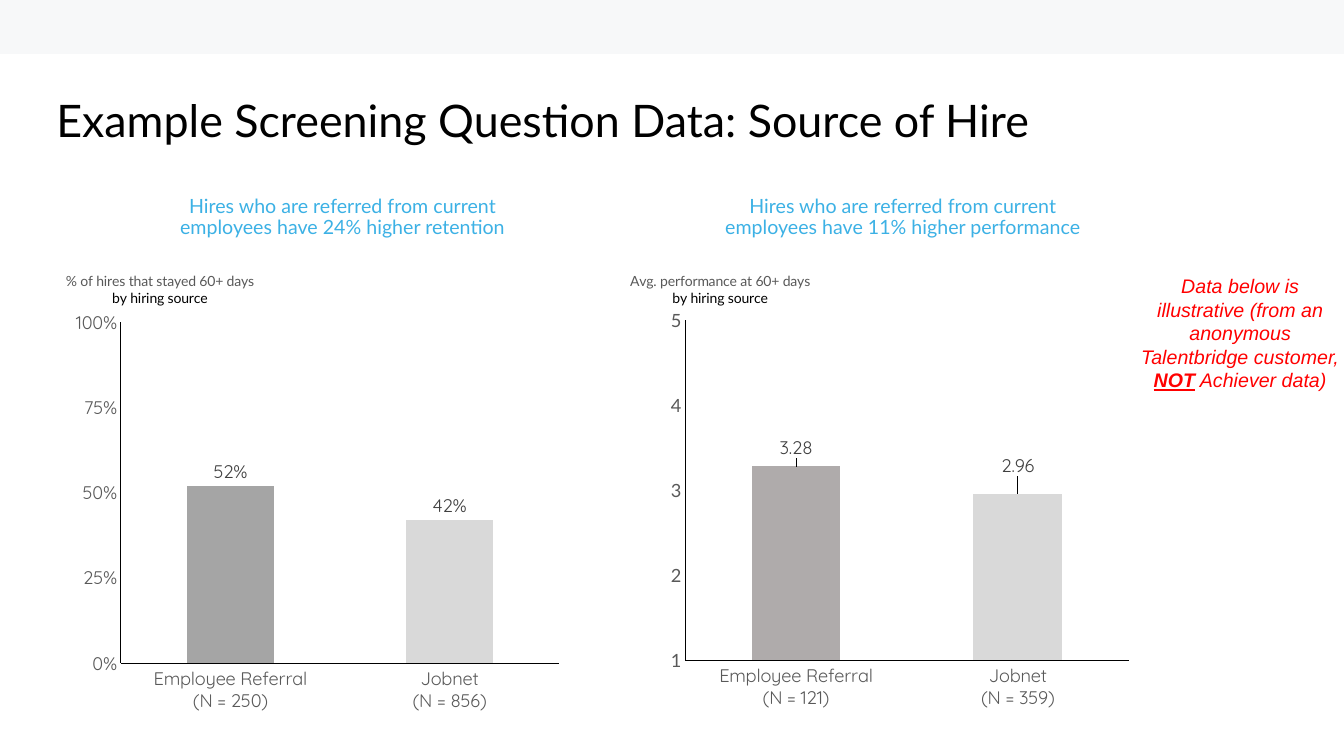
from lxml.etree import SubElement
from pptx import Presentation
from pptx.chart.data import CategoryChartData
from pptx.dml.color import RGBColor
from pptx.enum.chart import XL_CHART_TYPE as ChartType, XL_LABEL_POSITION as LabelPosition
from pptx.enum.chart import XL_TICK_MARK as TickMark
from pptx.enum.shapes import MSO_SHAPE as Shape
from pptx.enum.text import MSO_ANCHOR as Anchor, PP_ALIGN as Align
from pptx.oxml.ns import qn
from pptx.util import Cm, Pt

TITLE = "Example Screening Question Data: Source of Hire"
NOTE = [
    ("Data below is illustrative (from an anonymous Talentbridge customer, ", False),
    ("NOT", True),
    (" Achiever data)", False),
]
CHARTS = [
    dict(
        headline="Hires who are referred from current employees have 24% higher retention",
        headline_left=3.48, box=(1.45, 6.38, 13.31, 12.45),
        title=("% of hires that stayed 60+ days", "by hiring source"), title_at=(0.01, 0.03),
        bars=[("Employee Referral\n(N = 250)", 0.52, "A5A5A5", -0.06),
              ("Jobnet\n(N = 856)", 0.42, "D9D9D9", -0.06)],
        scale=(0, 1, 0.25), axis_format="0%", label_format="0%", axis_font="Quicksand",
        plot=(0.12, 0.14, 0.83, 0.69),
    ),
    dict(
        headline="Hires who are referred from current employees have 11% higher performance",
        headline_left=17.6, box=(15.67, 6.38, 13.31, 12.07),
        title=("Avg. performance at 60+ days", "by hiring source"), title_at=(0.01, 0.03),
        bars=[("Employee Referral\n(N = 121)", 3.28, "AFABAB", -0.07),
              ("Jobnet\n(N = 359)", 2.96, "D9D9D9", -0.09)],
        scale=(1, 5, 1), axis_format="0", label_format="0.00", axis_font="Lato",
        plot=(0.12, 0.14, 0.84, 0.71),
    ),
]


def rgb(color):
    return RGBColor.from_string(color)


def set_font(font, size, color, name="Lato"):
    font.size, font.name, font.bold = Pt(size), name, False
    font.color.rgb = rgb(color)


def add_text(slide, box, runs, size, color, name="Lato", align=Align.CENTER,
             anchor=Anchor.TOP, spacing=None, margins=None, italic=None):
    frame = slide.shapes.add_textbox(*map(Cm, box)).text_frame
    frame.word_wrap, frame.vertical_anchor = True, anchor
    if margins is not None:
        frame.margin_left = frame.margin_right = Cm(margins)
        frame.margin_top = frame.margin_bottom = Cm(margins)
    paragraph = frame.paragraphs[0]
    paragraph.alignment, paragraph.line_spacing = align, spacing
    for text, strong in runs:
        run = paragraph.add_run()
        run.text = text
        set_font(run.font, size, color, name)
        run.font.bold = run.font.underline = strong
        run.font.italic = italic


def set_layout(parent, index, **values):
    layout = parent.find(qn("c:layout"))
    if layout is None:
        layout = parent.makeelement(qn("c:layout"))
        parent.insert(index, layout)
    manual = SubElement(layout, qn("c:manualLayout"))
    for tag, value in values.items():
        SubElement(manual, qn(f"c:{tag}")).set("val", str(value))


def style_axis(axis, font_name):
    axis.has_major_gridlines = False
    axis.major_tick_mark = axis.minor_tick_mark = TickMark.NONE
    axis.format.line.color.rgb = rgb("000000")
    axis.format.line.width = Pt(0.75)
    set_font(axis.tick_labels.font, 13, "595959", font_name)


def add_bar_chart(slide, item):
    data = CategoryChartData(number_format=item["label_format"])
    data.categories = [bar[0] for bar in item["bars"]]
    data.add_series("Series 1", [bar[1] for bar in item["bars"]])
    frame = slide.shapes.add_chart(ChartType.COLUMN_STACKED, *map(Cm, item["box"]), data)
    chart = frame.chart
    chart.has_legend = False
    set_font(chart.font, 10, "000000")

    chart.has_title = True
    title = chart.chart_title
    title_frame = title.text_frame
    for index, (line, color) in enumerate(zip(item["title"], ("595959", "000000"))):
        paragraph = title_frame.add_paragraph() if index else title_frame.paragraphs[0]
        paragraph.alignment = Align.CENTER
        run = paragraph.add_run()
        run.text = line
        set_font(run.font, 10, color)
    left, top = item["title_at"]
    set_layout(title._element, 1, xMode="edge", yMode="edge", x=left, y=top)
    left, top, width, height = item["plot"]
    set_layout(chart._chartSpace.chart.plotArea, 0, layoutTarget="inner", xMode="edge",
               yMode="edge", x=left, y=top, w=width, h=height)

    style_axis(chart.category_axis, "Quicksand")
    axis = chart.value_axis
    style_axis(axis, item["axis_font"])
    axis.minimum_scale, axis.maximum_scale, axis.major_unit = item["scale"]
    axis.tick_labels.number_format = item["axis_format"]
    axis.tick_labels.number_format_is_linked = False

    plot = chart.plots[0]
    plot.gap_width, plot.overlap, plot.vary_by_categories = 150, 100, False
    series = plot.series[0]
    series.format.fill.solid()
    series.format.fill.fore_color.rgb = rgb(item["bars"][0][2])
    labels = series.data_labels
    labels.show_value, labels.position = True, LabelPosition.INSIDE_END
    labels.number_format, labels.number_format_is_linked = item["label_format"], False
    set_font(labels.font, 13, "404040", "Quicksand")
    for index, (_, _, color, lift) in enumerate(item["bars"]):
        point = series.points[index]
        point.format.fill.solid()
        point.format.fill.fore_color.rgb = rgb(color)
        label = point.data_label
        label.position = LabelPosition.INSIDE_END
        set_font(label.font, 13, "404040", "Quicksand")
        set_layout(labels._element.findall(qn("c:dLbl"))[index], 1, x=0, y=lift)


def main():
    """Build the source-of-hire slide and save it."""
    presentation = Presentation()
    presentation.slide_width, presentation.slide_height = Cm(33.87), Cm(19.05)
    slide = presentation.slides.add_slide(presentation.slide_layouts[6])
    band = slide.shapes.add_shape(Shape.RECTANGLE, 0, 0, presentation.slide_width, Cm(1.36))
    band.shadow.inherit = False
    band.fill.solid()
    band.fill.fore_color.rgb = rgb("F7F8F9")
    band.line.fill.background()

    add_text(slide, (1.42, 2.49, 30.91, 2.13), [(TITLE, None)], 32, "000000",
             align=Align.LEFT, spacing=0.9, margins=0)
    for item in CHARTS:
        add_text(slide, (item["headline_left"], 4.75, 10.31, 1.4), [(item["headline"], None)],
                 14, "3CB1E5", anchor=Anchor.BOTTOM, spacing=0.9)
        add_bar_chart(slide, item)
    add_text(slide, (28.37, 6.78, 5.77, 3.25), NOTE, 14, "FF0000", name="Arial", italic=True)
    presentation.save("out.pptx")


if __name__ == "__main__":
    main()
